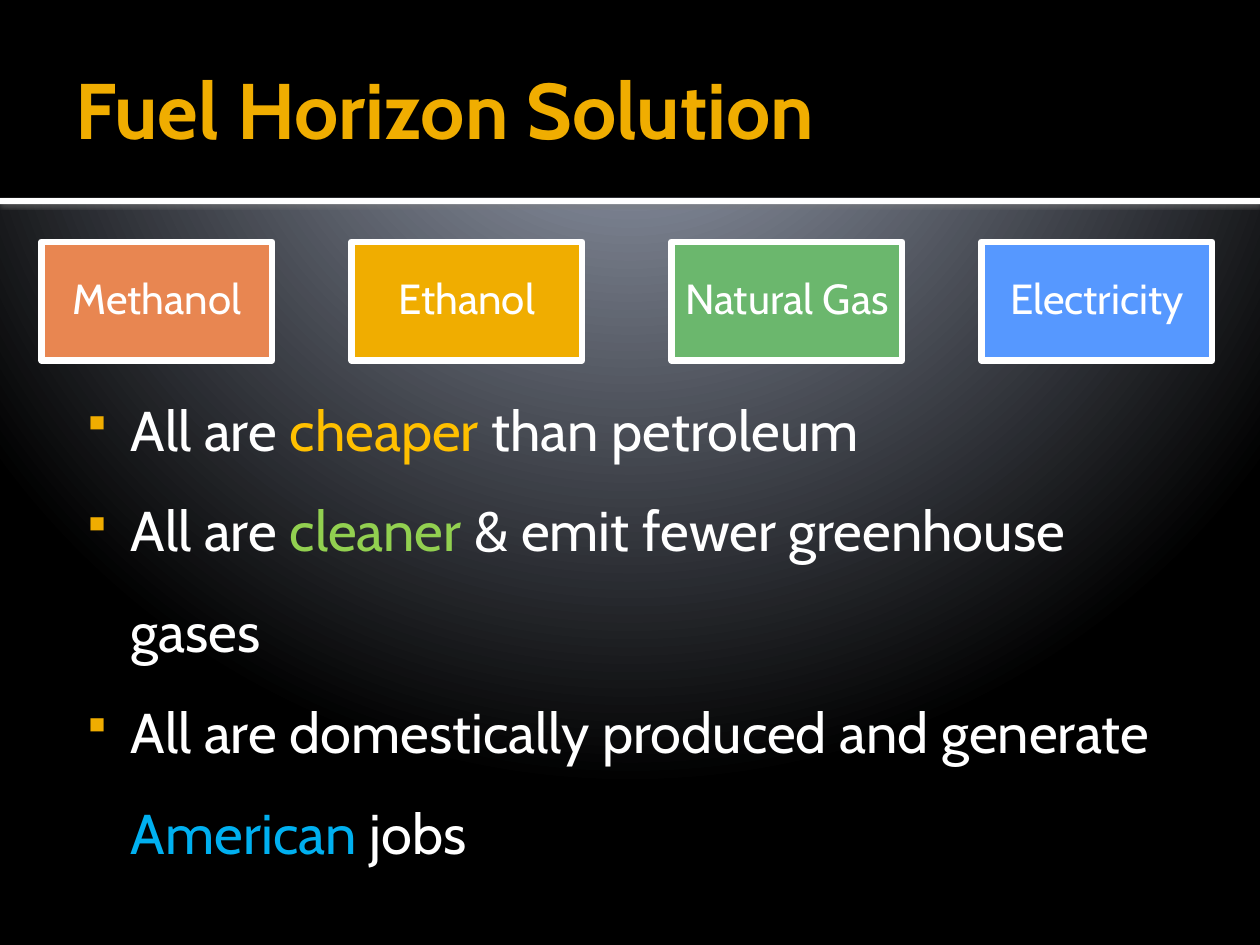
"""Build the Fuel Horizon Solution slide."""
from pptx import Presentation
from pptx.dml.color import RGBColor
from pptx.enum.shapes import MSO_SHAPE
from pptx.enum.text import MSO_ANCHOR, PP_ALIGN
from pptx.oxml import parse_xml
from pptx.oxml.ns import qn
from pptx.util import Inches, Pt

RECT = MSO_SHAPE.RECTANGLE
MIDDLE, BOTTOM = MSO_ANCHOR.MIDDLE, MSO_ANCHOR.BOTTOM
CENTER, LEFT = PP_ALIGN.CENTER, PP_ALIGN.LEFT
NS = 'xmlns:a="http://schemas.openxmlformats.org/drawingml/2006/main"'
WHITE, BLACK, GOLD = "FFFFFF", "000000", "F0AD00"
STOPS = [(0, "C0C0C0"), (7, "C0C0C0"), (7, "98A0B2"), (100, BLACK)]
FUELS = [
    ("Methanol", 0.33, "E88651"),
    ("Ethanol", 2.79, GOLD),
    ("Natural Gas", 5.33, "6BB76D"),
    ("Electricity", 7.79, "5698FF"),
]
POINTS = [
    [("All are ", WHITE), ("cheaper", "FFC000"), (" than petroleum", WHITE)],
    [("All are ", WHITE), ("cleaner ", "92D050"),
     ("& emit fewer greenhouse gases", WHITE)],
    [("All are domestically produced and generate ", WHITE),
     ("American", "00B0F0"), (" jobs", WHITE)],
]


def rgb(value):
    return RGBColor.from_string(value)


class Deck:
    font = "Cabin"
    bullet_font = "Wingdings"

    def __init__(self, slide):
        self.slide = slide

    def background(self):
        self.slide.background.fill.gradient()
        stops = "".join(
            f'<a:gs pos="{pos * 1000}"><a:srgbClr val="{color}"/></a:gs>'
            for pos, color in STOPS)
        grad = parse_xml(
            f'<a:gradFill {NS} rotWithShape="1"><a:gsLst>{stops}</a:gsLst>'
            '<a:path path="circle"><a:fillToRect l="10000" t="-25000" '
            'r="10000" b="125000"/></a:path></a:gradFill>')
        old = next(self.slide.element.iter(qn("a:gradFill")))
        old.getparent().replace(old, grad)

    def frame(self, tf, insets, anchor):
        tf.word_wrap = True
        tf.vertical_anchor = anchor
        (tf.margin_left, tf.margin_top,
         tf.margin_right, tf.margin_bottom) = map(Inches, insets)

    def style(self, r, size, color, bold=False):
        r.font.name = self.font
        r.font.size = Pt(size)
        r.font.bold = bold
        r.font.color.rgb = rgb(color)

    def rect(self, box, fill):
        sp = self.slide.shapes.add_shape(RECT, *map(Inches, box))
        sp.shadow.inherit = False
        sp.fill.solid()
        sp.fill.fore_color.rgb = rgb(fill)
        sp.line.fill.background()
        return sp

    def rule(self, box, fill):
        sp = self.rect(box, fill)
        sp.element.spPr.find(qn("a:effectLst")).append(parse_xml(
            f'<a:outerShdw {NS} blurRad="{Pt(2.5)}" dist="{Pt(0.8)}" '
            'dir="5400000"><a:srgbClr val="808080"><a:alpha val="60000"/>'
            '</a:srgbClr></a:outerShdw>'))

    def title(self, text, box):
        sp = self.slide.shapes.title
        sp.left, sp.top, sp.width, sp.height = map(Inches, box)
        tf = sp.text_frame
        tf.text = text
        self.frame(tf, (0.1, 0.05, 0.05, 0.05), MIDDLE)
        p = tf.paragraphs[0]
        p.alignment = LEFT
        self.style(p.runs[0], 45, GOLD, bold=True)
        self.slide.shapes.element.append(sp.element)

    def card(self, text, box, fill):
        sp = self.rect(box, fill)
        sp.line.color.rgb = rgb(WHITE)
        sp.line.width = Pt(3.78)
        tf = sp.text_frame
        tf.text = text
        self.frame(tf, (0.1, 0.1, 0.1, 0.1), MIDDLE)
        tf.word_wrap = False
        p = tf.paragraphs[0]
        p.alignment = CENTER
        p.line_spacing = 0.9
        self.style(p.runs[0], 24, WHITE)

    def bullets(self, points, box):
        tf = self.slide.shapes.add_textbox(*map(Inches, box)).text_frame
        self.frame(tf, (0.06, 0.1, 0.1, 0.13), BOTTOM)
        for i, point in enumerate(points):
            p = tf.add_paragraph() if i else tf.paragraphs[0]
            p.line_spacing = 1.5
            pPr = p._p.get_or_add_pPr()
            pPr.set("marL", str(Inches(0.48)))
            pPr.set("indent", str(Inches(-0.35)))
            for tag in (f'<a:buClr {NS}><a:srgbClr val="{GOLD}"/></a:buClr>',
                        f'<a:buSzPct {NS} val="80000"/>',
                        f'<a:buFont {NS} typeface="{self.bullet_font}" '
                        'pitchFamily="2" charset="2"/>',
                        f'<a:buChar {NS} char="§"/>'):
                pPr.append(parse_xml(tag))
            for text, color in point:
                r = p.add_run()
                r.text = text
                self.style(r, 32, color)


def main():
    prs = Presentation()
    prs.slide_width, prs.slide_height = Inches(10), Inches(7.5)
    deck = Deck(prs.slides.add_slide(prs.slide_layouts[5]))
    deck.background()
    deck.rule((0, 1.57, 10, 0.05), WHITE)
    deck.rect((0, 0, 10, 1.57), BLACK)
    deck.title("Fuel Horizon Solution", (0.5, 0.17, 9, 1.37))
    deck.bullets(POINTS, (0.5, 1.94, 9, 5.06))
    for name, left, color in FUELS:
        deck.card(name, (left, 1.92, 1.83, 0.94), color)
    prs.save("out.pptx")


if __name__ == "__main__":
    main()
